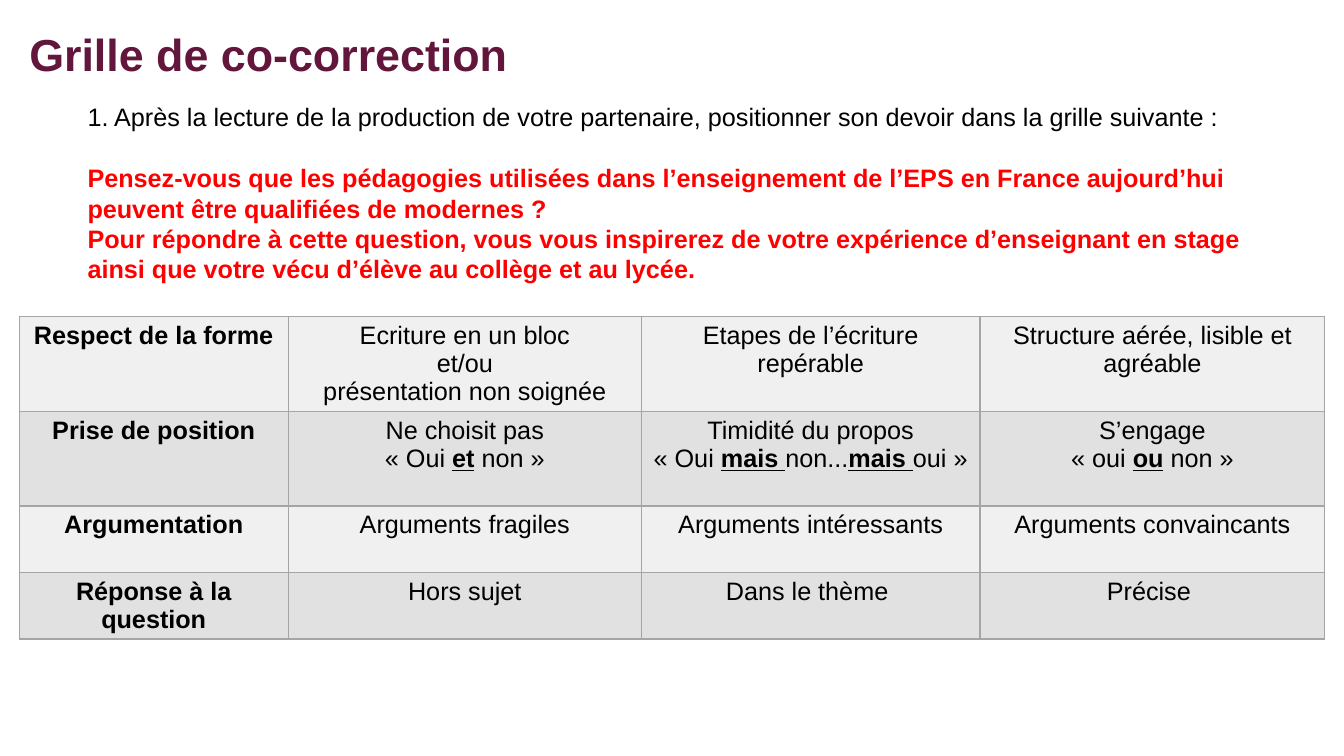
from dataclasses import dataclass

from lxml import etree
from pptx import Presentation
from pptx.dml.color import RGBColor
from pptx.enum.text import MSO_ANCHOR, MSO_AUTO_SIZE, PP_ALIGN
from pptx.oxml.ns import qn
from pptx.util import Inches, Pt

LEFT, CENTER = PP_ALIGN.LEFT, PP_ALIGN.CENTER
MIDDLE = MSO_ANCHOR.MIDDLE
NO_AUTOFIT = MSO_AUTO_SIZE.NONE
TITLE_ONLY = 5


@dataclass(frozen=True)
class Theme:
    font: str = "Arial"
    title_size: int = 32
    body_size: int = 18
    title: str = "63163C"
    ink: str = "000000"
    alert: str = "FF0000"
    row_fills: tuple[str, str] = ("F0F0F0", "E1E1E1")
    border: str = "A5A5A5"
    border_width: int = 1


@dataclass(frozen=True)
class Criterion:
    name: str
    levels: tuple[str, str, str]
    height: float


THEME = Theme()
COLUMN_WIDTHS = (2.67, 3.5, 3.36, 3.42)

# Asterisks enclose the words stressed in bold underline
CRITERIA = (
    Criterion(
        "Respect de la forme",
        (
            "Ecriture en un bloc\n et/ou \nprésentation non soignée",
            "Etapes de l’écriture repérable",
            "Structure aérée, lisible et agréable",
        ),
        0.94,
    ),
    Criterion(
        "Prise de position",
        (
            "Ne choisit pas\n« Oui *et* non »",
            "Timidité du propos\n« Oui *mais *non...*mais *oui »",
            "S’engage\n« oui *ou* non »",
        ),
        0.94,
    ),
    Criterion(
        "Argumentation",
        ("Arguments fragiles", "Arguments intéressants", "Arguments convaincants"),
        0.66,
    ),
    Criterion(
        "Réponse à la question",
        ("Hors sujet", "Dans le thème ", "Précise "),
        0.66,
    ),
)

INSTRUCTION = (
    "1. Après la lecture de la production de votre partenaire, "
    "positionner son devoir dans la grille suivante :"
)
QUESTION = (
    "Pensez-vous que les pédagogies utilisées dans l’enseignement de l’EPS "
    "en France aujourd’hui peuvent être qualifiées de modernes ?\n"
    "Pour répondre à cette question, vous vous inspirerez de votre expérience "
    "d’enseignant en stage ainsi que votre vécu d’élève au collège et au lycée."
)


def write_text(text_frame, text: str, *, size: int = THEME.body_size,
               color: str = THEME.ink, bold: bool = False, align=LEFT,
               line_spacing: float = 1.0, space_before: float = 0,
               append: bool = False) -> None:
    """Write one paragraph per line; space_before applies to the first line."""
    for index, line in enumerate(text.split("\n")):
        is_first = index == 0
        if is_first and not append:
            paragraph = text_frame.paragraphs[0]
        else:
            paragraph = text_frame.add_paragraph()
        paragraph.alignment = align
        paragraph.line_spacing = line_spacing
        if is_first and space_before:
            paragraph.space_before = Pt(space_before)
        for part, words in enumerate(line.split("*")):
            stressed = part % 2 == 1
            run = paragraph.add_run()
            run.text = words
            run.font.name = THEME.font
            run.font.size = Pt(size)
            run.font.bold = bold or stressed
            run.font.underline = stressed
            run.font.color.rgb = RGBColor.from_string(color)


def outline_cell(cell) -> None:
    """Draw the four borders, which must precede the cell's fill."""
    properties = cell._tc.get_or_add_tcPr()
    for position, side in enumerate(("a:lnL", "a:lnR", "a:lnT", "a:lnB")):
        line = etree.Element(qn(side), w=str(Pt(THEME.border_width)))
        fill = etree.SubElement(line, qn("a:solidFill"))
        etree.SubElement(fill, qn("a:srgbClr"), val=THEME.border)
        properties.insert(position, line)


def add_title(slide) -> None:
    title = slide.shapes.title
    title.left, title.top = Inches(0.19), Inches(0.18)
    title.width, title.height = Inches(5.54), Inches(0.77)
    title.text_frame.auto_size = NO_AUTOFIT
    title.text_frame.vertical_anchor = MIDDLE
    write_text(title.text_frame, "Grille de co-correction", size=THEME.title_size,
               color=THEME.title, bold=True, line_spacing=0.9)


def add_instructions(slide) -> None:
    box = slide.shapes.add_textbox(Inches(0.77), Inches(0.96), Inches(11.8), Inches(1.92))
    box.text_frame.word_wrap = True
    write_text(box.text_frame, INSTRUCTION)
    write_text(box.text_frame, QUESTION, color=THEME.alert, bold=True,
               space_before=22, append=True)


def add_grid(slide) -> None:
    frame = slide.shapes.add_table(
        len(CRITERIA), len(COLUMN_WIDTHS), Inches(0.19), Inches(3.14),
        Inches(sum(COLUMN_WIDTHS)), Inches(sum(item.height for item in CRITERIA)))
    table = frame.table
    for column, width in zip(table.columns, COLUMN_WIDTHS):
        column.width = Inches(width)
    for row_index, criterion in enumerate(CRITERIA):
        row = table.rows[row_index]
        row.height = Inches(criterion.height)
        fill_color = THEME.row_fills[row_index % 2]
        for column_index, text in enumerate((criterion.name, *criterion.levels)):
            cell = row.cells[column_index]
            cell.fill.solid()
            cell.fill.fore_color.rgb = RGBColor.from_string(fill_color)
            outline_cell(cell)
            write_text(cell.text_frame, text, bold=column_index == 0, align=CENTER)


def main() -> None:
    presentation = Presentation()
    presentation.slide_width, presentation.slide_height = Inches(13.33), Inches(7.5)
    slide = presentation.slides.add_slide(presentation.slide_layouts[TITLE_ONLY])
    add_title(slide)
    add_grid(slide)
    add_instructions(slide)
    presentation.save("out.pptx")


if __name__ == "__main__":
    main()
